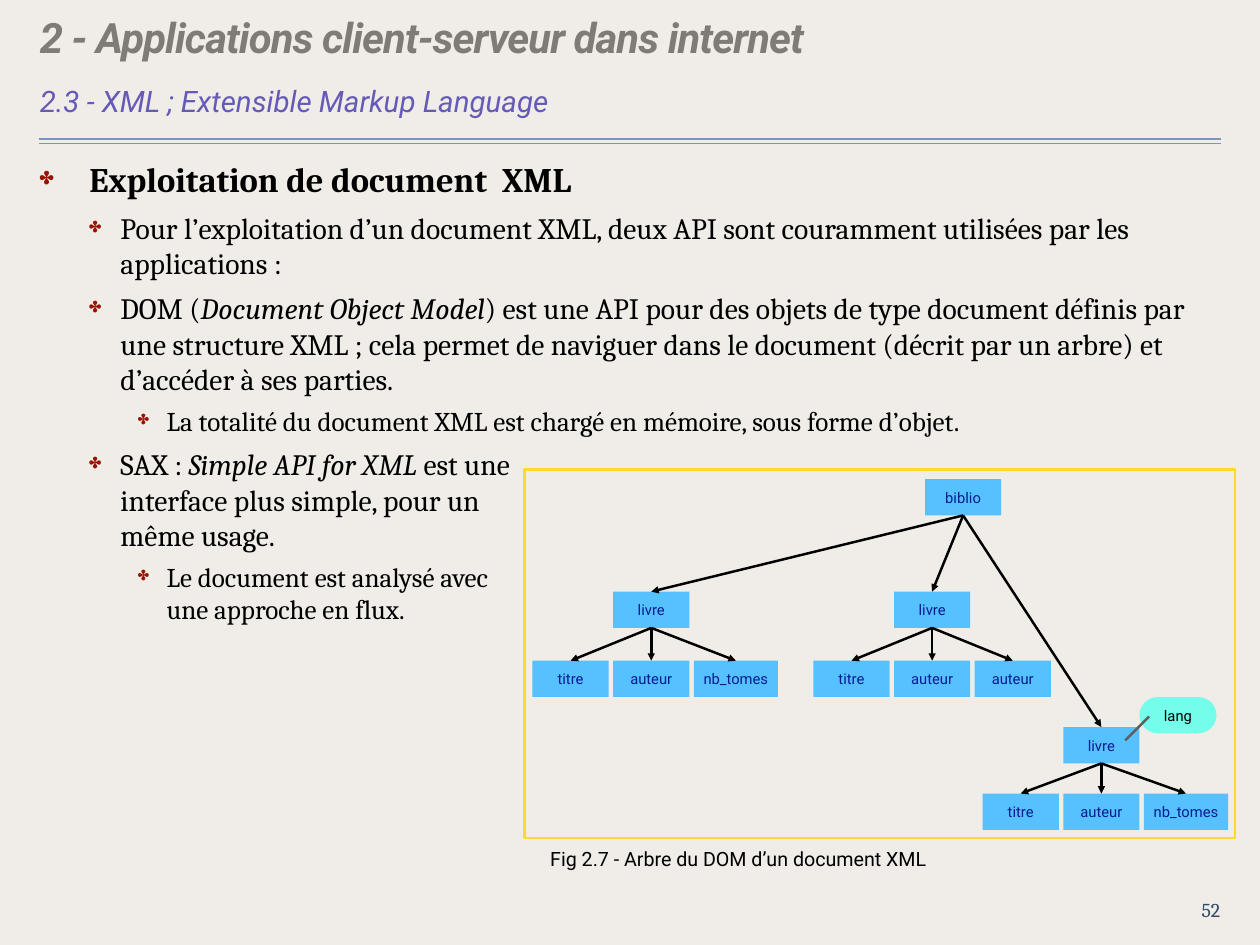
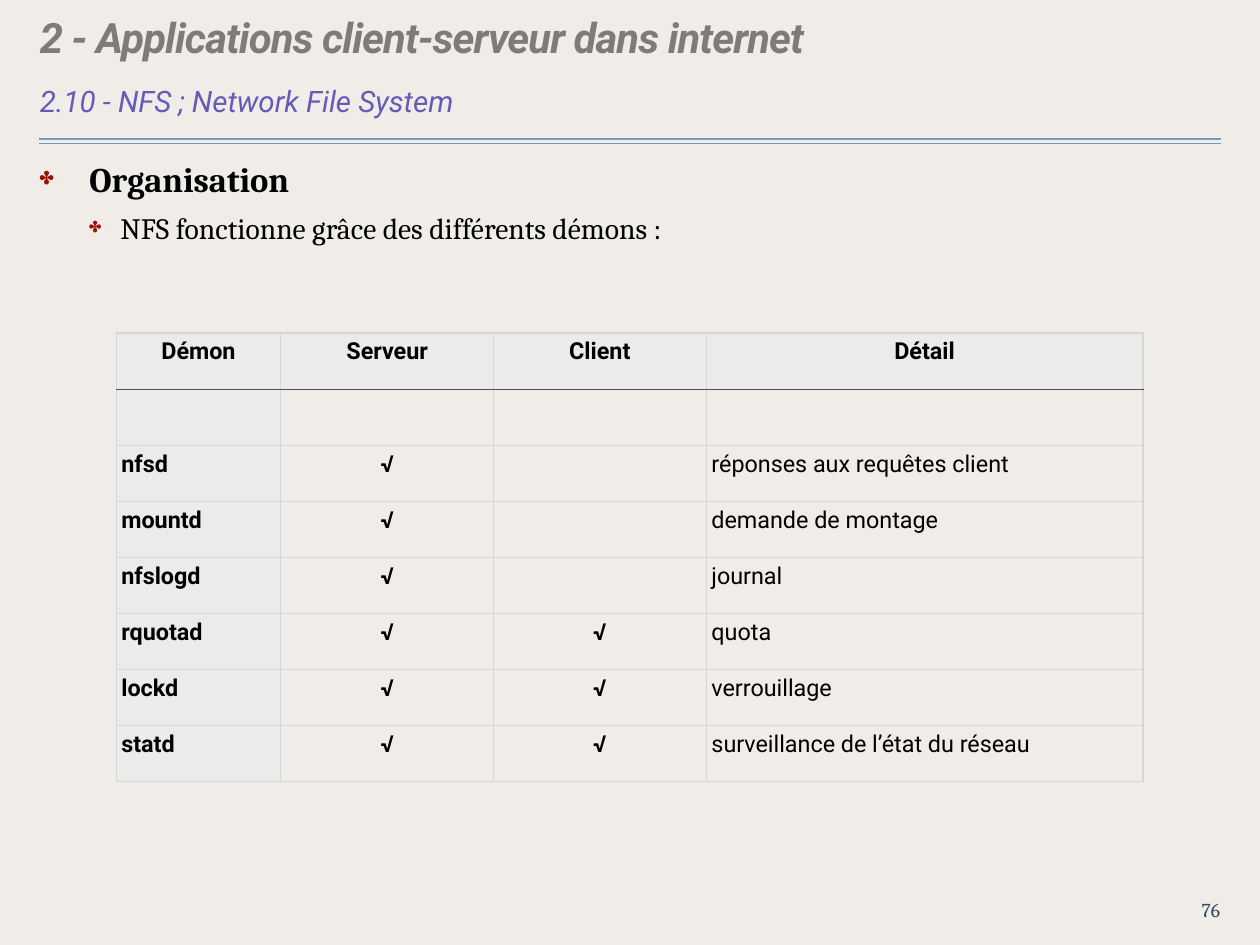
from dataclasses import dataclass
from typing import Optional

from lxml import etree
from pptx import Presentation
from pptx.dml.color import RGBColor
from pptx.enum import shapes, text
from pptx.oxml import ns
from pptx.util import Inches, Pt


# Theme: colours, fonts and type sizes
@dataclass(frozen=True)
class Theme:
    background: str = "F0EDE8"
    rule: str = "7A96B9"
    title: str = "7F7C78"
    subtitle: str = "665AB7"
    ink: str = "000000"
    bullet: str = "991200"
    page: str = "314864"
    node: str = "56C1FF"
    node_ink: str = "011B93"
    attribute: str = "73FDEA"
    attribute_line: str = "5E5E5E"
    frame: str = "FFD932"
    header_fill: str = "EBEBEB"
    border: str = "D6D6D6"
    header_border: str = "515151"
    sans: str = "Roboto"
    serif: str = "Cambria"
    title_size: int = 34
    subtitle_size: int = 24
    small_size: int = 16
    node_size: int = 12
    table_size: int = 19


THEME = Theme()
MARGIN = Inches(0.06)
LEFT, WIDTH = 0.39, 13.44


@dataclass(frozen=True)
class Level:
    size: int
    margin: float
    hanging: float
    space_before: int
    bold: bool = False


LEVELS = (
    Level(28, 0.56, 0.56, 12, bold=True),
    Level(24, 0.91, 0.35, 8),
    Level(22, 1.43, 0.32, 6),
)


@dataclass(frozen=True)
class Item:
    """A bullet; every second piece of its text is italic."""
    level: int
    pieces: tuple[str, ...]


@dataclass(frozen=True)
class Page:
    subtitle: str
    number: str
    items: tuple[Item, ...]


@dataclass(frozen=True)
class Book:
    left: float
    top: float
    drop: float
    fields: tuple[str, ...]


COURSE = "2 - Applications client-serveur dans internet"
XML_PAGE = Page("2.3 - XML ; Extensible Markup Language", "52", (
    Item(0, ("Exploitation de document  XML",)),
    Item(1, ("Pour l’exploitation d’un document XML, deux API sont couramment "
             "utilisées par les applications :",)),
    Item(1, ("DOM (", "Document Object Model",
             ") est une API pour des objets de type document définis par une structure XML ; "
             "cela permet de naviguer dans le document (décrit par un arbre) et d’accéder à "
             "ses parties.")),
    Item(2, ("La totalité du document XML est chargé en mémoire, sous forme d’objet.",)),
    Item(1, ("SAX : ", "Simple API for XML",
             " est une\ninterface plus simple, pour un\nmême usage.")),
    Item(2, ("Le document est analysé avec\nune approche en flux.",)),
))
NFS_PAGE = Page("2.10 - NFS ; Network File System", "76", (
    Item(0, ("Organisation",)),
    Item(1, ("NFS fonctionne grâce des différents démons :",)),
))
BOOKS = (
    Book(6.92, 6.68, 0.78, ("titre", "auteur", "nb_tomes")),
    Book(10.09, 6.68, 0.78, ("titre", "auteur", "auteur")),
    Book(12, 8.21, 0.75, ("titre", "auteur", "nb_tomes")),
)
COLUMN_WIDTHS = (1.86, 2.4, 2.4, 4.93)
DAEMONS = (
    ("Démon", "Serveur", "Client", "Détail"),
    ("", "", "", ""),
    ("nfsd", "√", "", "réponses aux requêtes client"),
    ("mountd", "√", "", "demande de montage"),
    ("nfslogd", "√", "", "journal"),
    ("rquotad", "√", "√", "quota"),
    ("lockd", "√", "√", "verrouillage"),
    ("statd", "√", "√", "surveillance de l’état du réseau"),
)


# Text helpers
def rgb(colour: str) -> RGBColor:
    return RGBColor.from_string(colour)


def add_xml(parent, tag: str, **attributes: str):
    return etree.SubElement(parent, ns.qn(tag), attributes)


def style_font(font, size: int, colour: str, name: str = THEME.sans,
               bold: bool = False, italic: bool = False) -> None:
    font.size, font.name, font.bold, font.italic = Pt(size), name, bold, italic
    font.color.rgb = rgb(colour)


def set_frame(frame, anchor=text.MSO_ANCHOR.MIDDLE, wrap: bool = True) -> None:
    frame.margin_left = frame.margin_right = MARGIN
    frame.margin_top = frame.margin_bottom = MARGIN
    frame.vertical_anchor = anchor
    frame.word_wrap = wrap
    frame.auto_size = text.MSO_AUTO_SIZE.NONE


def write(frame, content: str, size: int, colour: str, align=text.PP_ALIGN.LEFT, **font):
    frame.text = content
    paragraph = frame.paragraphs[0]
    paragraph.alignment = align
    style_font(paragraph.runs[0].font, size, colour, **font)
    return paragraph


def add_box(slide, left: float, top: float, width: float, height: float,
            anchor=text.MSO_ANCHOR.MIDDLE, wrap: bool = True):
    box = slide.shapes.add_textbox(Inches(left), Inches(top), Inches(width), Inches(height))
    set_frame(box.text_frame, anchor, wrap)
    return box.text_frame


def write_item(paragraph, item: Item) -> None:
    level = LEVELS[item.level]
    paragraph.level = item.level
    paragraph.space_before = Pt(level.space_before)
    properties = paragraph._p.get_or_add_pPr()
    properties.set("marL", str(Inches(level.margin)))
    properties.set("indent", str(-Inches(level.hanging)))
    add_xml(add_xml(properties, "a:buClr"), "a:srgbClr", val=THEME.bullet)
    add_xml(properties, "a:buSzPct", val="70000")
    add_xml(properties, "a:buChar", char="✤")
    for index, piece in enumerate(item.pieces):
        for line_index, line in enumerate(piece.split("\n")):
            if line_index:
                paragraph.add_line_break()
            run = paragraph.add_run()
            run.text = line
            style_font(run.font, level.size, THEME.ink, THEME.serif, level.bold, index % 2 == 1)


# Shape helpers
def add_line(slide, start: tuple[float, float], end: tuple[float, float],
             colour: str, width: float):
    line = slide.shapes.add_connector(
        shapes.MSO_CONNECTOR.STRAIGHT, *(Inches(value) for value in start + end))
    line.line.color.rgb = rgb(colour)
    line.line.width = Pt(width)
    add_xml(line._element.spPr, "a:effectLst")
    return line


def add_arrow(slide, parent, child) -> None:
    arrow = add_line(slide, (0, 0), (1, 1), THEME.ink, 2)
    arrow.begin_connect(parent, 2)
    arrow.end_connect(child, 0)
    add_xml(arrow.line._get_or_add_ln(), "a:tailEnd", type="triangle")


def add_node(slide, label: str, left: float, top: float, width: float = 0.86,
             kind=shapes.MSO_SHAPE.RECTANGLE, fill: str = THEME.node,
             ink: str = THEME.node_ink):
    node = slide.shapes.add_shape(kind, Inches(left), Inches(top), Inches(width), Inches(0.41))
    node.shadow.inherit = False
    node.fill.solid()
    node.fill.fore_color.rgb = rgb(fill)
    node.line.fill.background()
    set_frame(node.text_frame)
    write(node.text_frame, label, THEME.node_size, ink, text.PP_ALIGN.CENTER)
    return node


# Parts shared by the slides
def add_page(presentation, page: Page):
    slide = presentation.slides.add_slide(presentation.slide_layouts[5])
    for top in (1.57, 1.62):
        add_line(slide, (0.44, top), (13.78, top), THEME.rule, 1)

    title = slide.shapes.title
    title.left, title.top = Inches(LEFT), Inches(0.03)
    title.width, title.height = Inches(WIDTH), Inches(0.76)
    set_frame(title.text_frame)
    heading = write(title.text_frame, COURSE, THEME.title_size, THEME.title,
                    bold=True, italic=True)
    heading.runs[0]._r.get_or_add_rPr().set("spc", "-70")

    body = add_box(slide, LEFT, 1.73, WIDTH, 8.14, text.MSO_ANCHOR.TOP)
    for index, item in enumerate(page.items):
        write_item(body.add_paragraph() if index else body.paragraphs[0], item)

    subtitle = add_box(slide, LEFT, 0.76, WIDTH, 0.76)
    write(subtitle, page.subtitle, THEME.subtitle_size, THEME.subtitle,
          italic=True).space_before = Pt(10)
    number = add_box(slide, 13.49, 10.08, 0.35, 0.39, text.MSO_ANCHOR.TOP, wrap=False)
    write(number, page.number, THEME.small_size, THEME.page,
          text.PP_ALIGN.CENTER, name=THEME.serif)
    return slide


# Document tree
def add_tree(slide) -> None:
    root = add_node(slide, "biblio", 10.44, 5.41)
    for book in BOOKS:
        parent = add_node(slide, "livre", book.left, book.top)
        add_arrow(slide, root, parent)
        for index, field in enumerate(book.fields):
            leaf = add_node(slide, field, book.left + 0.91 * (index - 1), book.top + book.drop,
                            0.95 if field == "nb_tomes" else 0.86)
            add_arrow(slide, parent, leaf)

    attribute = add_node(slide, "lang", 12.86, 7.87, 0.87, shapes.MSO_SHAPE.ROUNDED_RECTANGLE,
                         THEME.attribute, THEME.ink)
    attribute.adjustments[0] = 0.5
    add_line(slide, (12.97, 8.09), (12.7, 8.36), THEME.attribute_line, 2)

    frame = slide.shapes.add_shape(shapes.MSO_SHAPE.RECTANGLE, Inches(5.92), Inches(5.3),
                                   Inches(8.02), Inches(4.16))
    frame.shadow.inherit = False
    frame.fill.background()
    frame.line.color.rgb = rgb(THEME.frame)
    frame.line.width = Pt(2)
    caption = add_box(slide, 6.15, 9.5, 4.41, 0.38, wrap=False)
    write(caption, "Fig 2.7 - Arbre du DOM d’un document XML", THEME.small_size, THEME.ink)


# Daemon table
def style_cell(cell, fill: Optional[str], top: str, bottom: str) -> None:
    properties = cell._tc.get_or_add_tcPr()
    sides = {"L": THEME.border, "R": THEME.border, "T": top, "B": bottom}
    for side, colour in sides.items():
        line = add_xml(properties, f"a:ln{side}", w=str(Pt(1)))
        add_xml(add_xml(line, "a:solidFill"), "a:srgbClr", val=colour)
    if fill:
        cell.fill.solid()
        cell.fill.fore_color.rgb = rgb(fill)
    else:
        cell.fill.background()
    cell.margin_left = cell.margin_right = cell.margin_top = cell.margin_bottom = MARGIN


def add_daemon_table(slide) -> None:
    table = slide.shapes.add_table(len(DAEMONS), len(COLUMN_WIDTHS), Inches(1.31), Inches(3.76),
                                   Inches(sum(COLUMN_WIDTHS)), Inches(5.07)).table
    table.first_row = table.horz_banding = False
    for column, width in zip(table.columns, COLUMN_WIDTHS):
        column.width = Inches(width)
    last = len(COLUMN_WIDTHS) - 1
    for row, values in enumerate(DAEMONS):
        for column, value in enumerate(values):
            cell = table.cell(row, column)
            header = row == 0
            style_cell(cell, THEME.header_fill if header or column == 0 else None,
                       THEME.header_border if row == 1 else THEME.border,
                       THEME.header_border if header else THEME.border)
            if value:
                centred = header or 0 < column < last
                write(cell.text_frame, value, THEME.table_size, THEME.ink,
                      text.PP_ALIGN.CENTER if centred else text.PP_ALIGN.LEFT,
                      bold=header or column < last).space_before = Pt(10)


def main() -> None:
    presentation = Presentation()
    presentation.slide_width, presentation.slide_height = Inches(14.22), Inches(10.67)
    background = presentation.slide_master.background.fill
    background.solid()
    background.fore_color.rgb = rgb(THEME.background)
    add_tree(add_page(presentation, XML_PAGE))
    add_daemon_table(add_page(presentation, NFS_PAGE))
    presentation.save("out.pptx")


if __name__ == "__main__":
    main()
